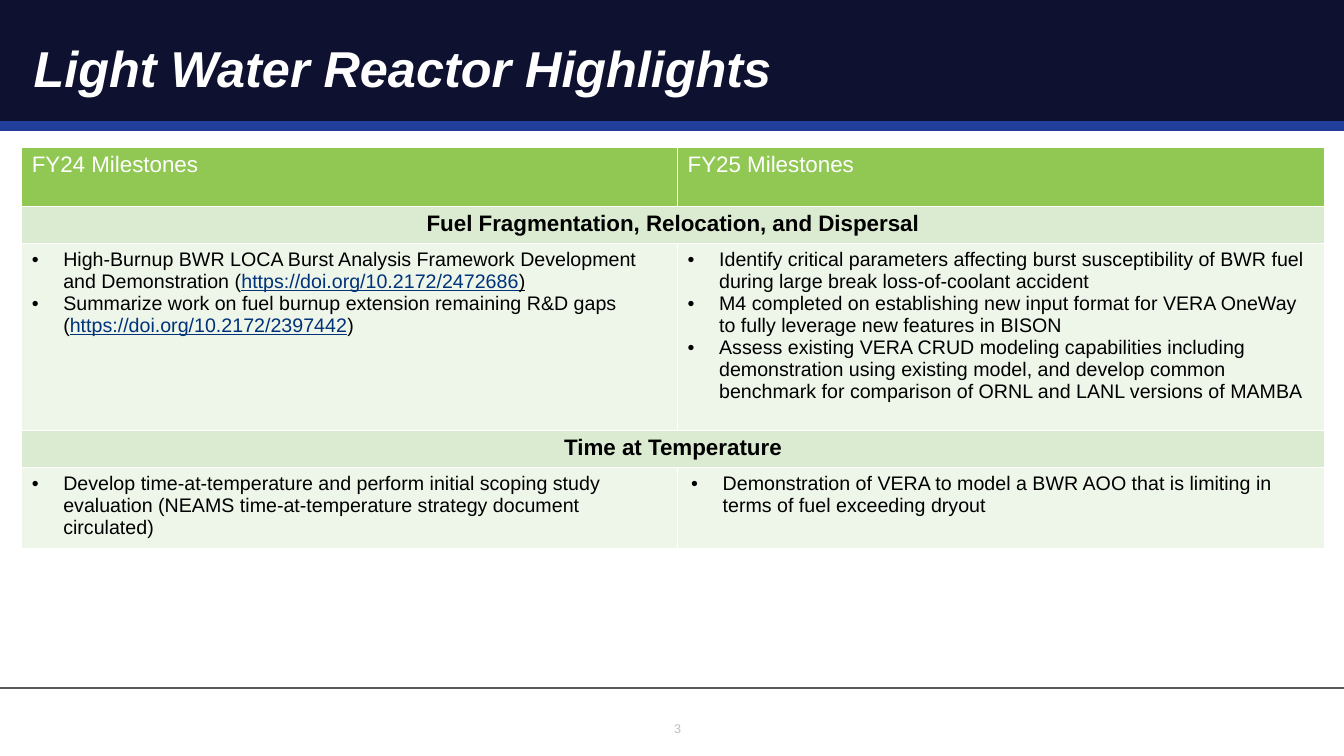
from dataclasses import dataclass

import pptx
import pptx.dml.color
import pptx.enum.shapes
import pptx.enum.text
import pptx.oxml
import pptx.oxml.ns
import pptx.util

Pt = pptx.util.Pt
ALIGN = pptx.enum.text.PP_ALIGN
ANCHOR = pptx.enum.text.MSO_ANCHOR

COLORS = {
    "navy": "0E1130", "blue": "213E9A", "rule": "595959", "white": "FFFFFF",
    "header": "90C853", "section": "DBEBD1", "body": "EEF5E9",
    "black": "000000", "link": "003279", "number": "BFBFBF",
}


@dataclass
class Run:
    text: str
    color: str = "black"
    underline: bool = False


@dataclass
class Cell:
    paragraphs: list[list[Run]]
    kind: str = "body"
    inset: float = 7.2
    indent: float = 22.5


@dataclass
class Rule:
    y: float
    color: str
    width: float


@dataclass
class Label:
    text: str
    box: tuple[float, float, float, float]
    anchor: ANCHOR
    align: ALIGN
    spacing: float
    font: dict


def rgb(name: str) -> pptx.dml.color.RGBColor:
    return pptx.dml.color.RGBColor.from_string(COLORS[name])


def format_font(font, color: str, **values) -> None:
    font.color.rgb = rgb(color)
    for name, value in {"name": "Arial", **values}.items():
        setattr(font, name, value)


def add_rule(s, rule: Rule) -> None:
    line = s.shapes.add_connector(pptx.enum.shapes.MSO_CONNECTOR.STRAIGHT,
                                  0, Pt(rule.y), Pt(WIDTH), Pt(rule.y))
    line.line.color.rgb = rgb(rule.color)
    line.line.width = Pt(rule.width)
    sp_pr = line._element.spPr
    sp_pr.append(sp_pr.makeelement(pptx.oxml.ns.qn("a:effectLst"), {}))


def add_label(s, label: Label) -> None:
    tf = s.shapes.add_textbox(*map(Pt, label.box)).text_frame
    tf.word_wrap = True
    tf.vertical_anchor = label.anchor
    for side in ("left", "top", "right", "bottom"):
        setattr(tf, f"margin_{side}", 0)
    p = tf.paragraphs[0]
    p.alignment = label.align
    p.line_spacing = label.spacing
    r = p.add_run()
    r.text = label.text
    format_font(r.font, **label.font)


def add_bullet(p, indent: float) -> None:
    p_pr = p._p.get_or_add_pPr()
    p_pr.set("marL", str(Pt(indent)))
    p_pr.set("indent", str(-Pt(22.5)))
    for tag, name, value in (("a:buFont", "typeface", "Arial"), ("a:buChar", "char", "•")):
        p_pr.append(p_pr.makeelement(pptx.oxml.ns.qn(tag), {name: value}))


def add_borders(cell) -> None:
    tc_pr = cell._tc.get_or_add_tcPr()
    for i, side in enumerate("LRTB"):
        tc_pr.insert(i, pptx.oxml.parse_xml(
            f'<a:ln{side} {pptx.oxml.ns.nsdecls("a")} w="{Pt(1)}"><a:solidFill>'
            f'<a:srgbClr val="{COLORS["white"]}"/></a:solidFill></a:ln{side}>'))


def fill_cell(cell, content: Cell) -> None:
    cell.margin_left = cell.margin_right = Pt(content.inset)
    tf = cell.text_frame
    for i, runs in enumerate(content.paragraphs):
        p = tf.add_paragraph() if i else tf.paragraphs[0]
        if content.kind == "body":
            add_bullet(p, content.indent)
        elif content.kind == "section":
            p.alignment = ALIGN.CENTER
        for run in runs:
            r = p.add_run()
            r.text = run.text
            format_font(r.font, run.color, underline=run.underline,
                        size=Pt(14 if content.kind == "body" else 16),
                        bold=content.kind == "section")


def add_milestones(s, rows: list[list[Cell]]) -> None:
    table = s.shapes.add_table(len(rows), len(COLUMN_WIDTHS), Pt(15.5), Pt(105),
                               Pt(sum(COLUMN_WIDTHS)), Pt(sum(ROW_HEIGHTS))).table
    table.horz_banding = False
    for column, width in zip(table.columns, COLUMN_WIDTHS):
        column.width = Pt(width)
    for i, (contents, height) in enumerate(zip(rows, ROW_HEIGHTS)):
        table.rows[i].height = Pt(height)
        for cell in table.rows[i].cells:
            cell.fill.solid()
            cell.fill.fore_color.rgb = rgb(contents[0].kind)
            add_borders(cell)
        if len(contents) == 1:
            table.cell(i, 0).merge(table.cell(i, 1))
        for j, content in enumerate(contents):
            fill_cell(table.cell(i, j), content)


WIDTH, HEIGHT = 960, 540
COLUMN_WIDTHS = (468.5, 462)
ROW_HEIGHTS = (42.5, 26.5, 133.5, 25, 54.5)
RULES = [Rule(90, "blue", 6.75), Rule(491.5, "rule", 1)]
LABELS = [
    Label("Light Water Reactor Highlights", (24, 24, 920, 54), ANCHOR.MIDDLE, ALIGN.LEFT, 0.9,
          {"color": "white", "size": Pt(36), "bold": True, "italic": True}),
    Label("3", (466, 506, 36, 20), ANCHOR.BOTTOM, ALIGN.CENTER, 1.0,
          {"color": "number", "size": Pt(9)}),
]
MILESTONES = [
    [Cell([[Run(f"{year} Milestones", "white")]], "header") for year in ("FY24", "FY25")],
    [Cell([[Run("Fuel Fragmentation, Relocation, and Dispersal")]], "section")],
    [
        Cell([
            [Run("High-Burnup BWR LOCA Burst Analysis Framework Development and Demonstration ("),
             Run("https://doi.org/10.2172/2472686", "link", True), Run(")", underline=True)],
            [Run("Summarize work on fuel burnup extension remaining R&D gaps ("),
             Run("https://doi.org/10.2172/2397442", "link", True), Run(")")],
        ]),
        Cell([
            [Run("Identify critical parameters affecting burst susceptibility of BWR fuel "
                 "during large break loss-of-coolant accident")],
            [Run("M4 completed on establishing new input format for VERA OneWay to fully "
                 "leverage new features in BISON")],
            [Run("Assess existing VERA CRUD modeling capabilities including demonstration "
                 "using existing model, and develop common benchmark for comparison of "
                 "ORNL and LANL versions of MAMBA")],
        ]),
    ],
    [Cell([[Run("Time at Temperature")]], "section")],
    [
        Cell([[Run("Develop time-at-temperature and perform initial scoping study evaluation "
                   "(NEAMS time-at-temperature strategy document circulated)")]]),
        Cell([[Run("Demonstration of VERA to model a BWR AOO that is limiting in terms of "
                   "fuel exceeding dryout")]], inset=0.75, indent=31.5),
    ],
]


def main() -> None:
    prs = pptx.Presentation()
    prs.slide_width, prs.slide_height = Pt(WIDTH), Pt(HEIGHT)
    s = prs.slides.add_slide(prs.slide_layouts[6])

    # Title band and rules
    band = s.shapes.add_shape(pptx.enum.shapes.MSO_SHAPE.RECTANGLE, 0, 0, Pt(WIDTH), Pt(90))
    band.shadow.inherit = False
    band.fill.solid()
    band.fill.fore_color.rgb = rgb("navy")
    band.line.fill.background()
    for rule in RULES:
        add_rule(s, rule)

    # Title and page number
    for label in LABELS:
        add_label(s, label)

    # Milestone table
    add_milestones(s, MILESTONES)
    prs.save("out.pptx")


if __name__ == "__main__":
    main()
